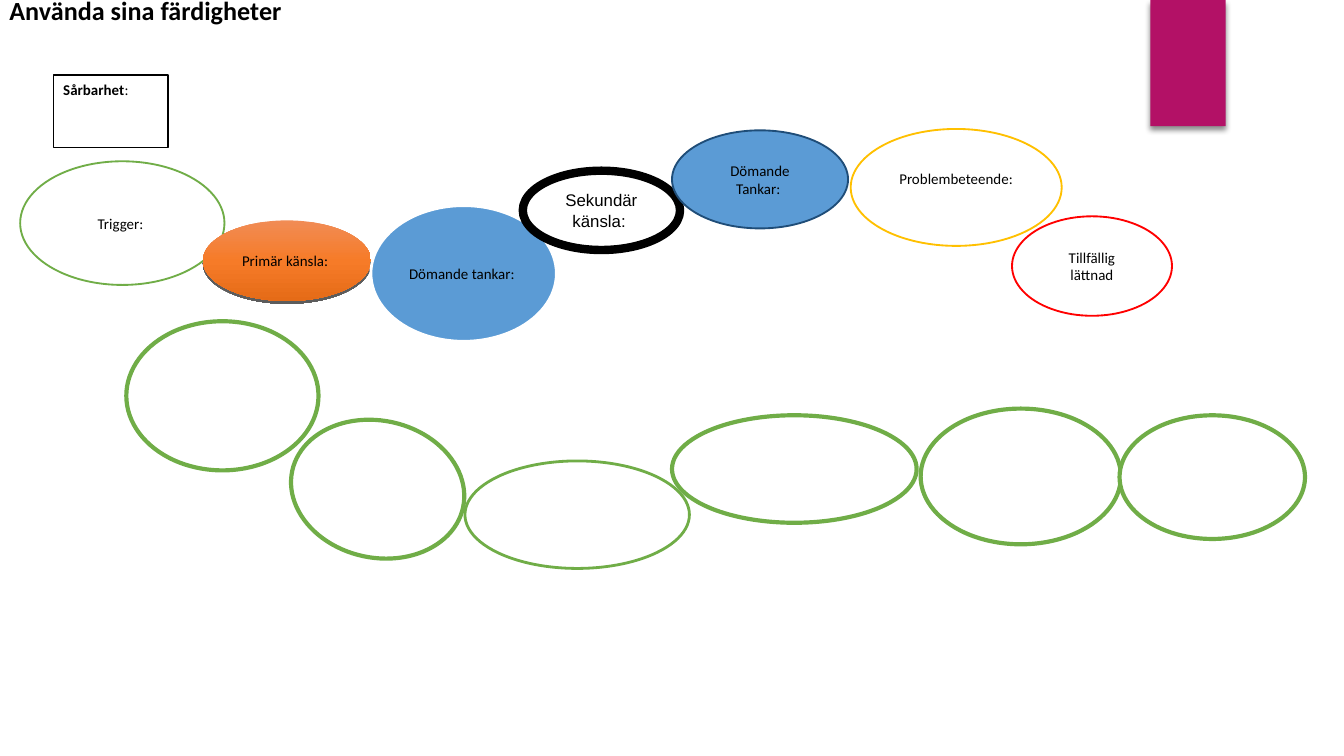
import copy

from lxml import etree
from pptx import Presentation
from pptx import util as u
from pptx.dml.color import RGBColor
from pptx.enum import shapes, text
from pptx.oxml.ns import qn

COLORS = {
    "black": "000000", "white": "FFFFFF", "magenta": "B31166",
    "green": "70AD47", "blue": "5B9BD5", "navy": "1F4D78",
    "yellow": "FFC000", "red": "FF0000",
    "orange_top": "F18C55", "orange_mid": "F67B28", "orange_low": "E56B17",
}
ORANGE = ("orange_top", "orange_mid", "orange_low")
OVAL = shapes.MSO_SHAPE.OVAL
RECTANGLE = shapes.MSO_SHAPE.RECTANGLE


def rgb(name):
    return RGBColor.from_string(COLORS[name])


def paint_gradient(fill, names):
    """Spread the named colours evenly from top to bottom."""
    fill.gradient()
    fill.gradient_angle = 270
    first = fill.gradient_stops[0]._gs
    for _ in range(len(names) - len(fill.gradient_stops)):
        first.addnext(copy.deepcopy(first))
    for i, (stop, name) in enumerate(zip(fill.gradient_stops, names)):
        stop.position = i / (len(names) - 1)
        stop.color.rgb = rgb(name)


def add_shadow(shape, opacity, blur, distance):
    """Drop a black shadow straight down; blur and distance in points."""
    effects = shape._element.spPr.find(qn("a:effectLst"))
    shadow = etree.SubElement(
        effects, qn("a:outerShdw"), blurRad=str(int(u.Pt(blur))),
        dist=str(int(u.Pt(distance))), dir="5400000", rotWithShape="0")
    color = etree.SubElement(shadow, qn("a:srgbClr"), val=COLORS["black"])
    etree.SubElement(color, qn("a:alpha"), val=str(opacity * 1000))


def add_figure(slide, kind, box, fill="white", line=None, width=1, turn=0):
    figure = slide.shapes.add_shape(kind, *map(u.Inches, box))
    figure.shadow.inherit = False
    figure.rotation = turn
    if isinstance(fill, tuple):
        paint_gradient(figure.fill, fill)
    else:
        figure.fill.solid()
        figure.fill.fore_color.rgb = rgb(fill)
    if line:
        figure.line.color.rgb = rgb(line)
        figure.line.width = u.Pt(width)
    else:
        figure.line.fill.background()
    return figure


def write(shape, *parts, size=8, font="Calibri", align=text.PP_ALIGN.CENTER,
          anchor=text.MSO_ANCHOR.MIDDLE, side=0.07, top=0.04, bottom=0.04):
    """Write one paragraph made of (words, bold) parts."""
    frame = shape.text_frame
    frame.word_wrap = True
    frame.vertical_anchor = anchor
    frame.margin_left = frame.margin_right = u.Inches(side)
    frame.margin_top, frame.margin_bottom = u.Inches(top), u.Inches(bottom)
    paragraph = frame.paragraphs[0]
    paragraph.alignment = align
    for words, bold in parts:
        run = paragraph.add_run()
        run.text = words
        run.font.name, run.font.size, run.font.bold = font, u.Pt(size), bold
        run.font.color.rgb = rgb("black")


def add_ribbon(slide, box):
    ribbon = add_figure(slide, RECTANGLE, box, "magenta")
    add_shadow(ribbon, 45, 3, 2)


def add_vulnerability(slide, box):
    note = add_figure(slide, RECTANGLE, box, line="black", width=0.75)
    write(note, ("Sårbarhet", True), (":", False),
          align=text.PP_ALIGN.LEFT, anchor=text.MSO_ANCHOR.TOP)


def add_chain(slide, left, top):
    """Labelled links of the behaviour chain, offset from left and top."""
    links = [
        ("Trigger: ", (0, 0.24, 1.52, 0.92), dict(line="green"), {}),
        ("Primär känsla: ", (1.36, 0.68, 1.25, 0.6), dict(fill=ORANGE), {}),
        ("Dömande tankar: ", (2.61, 0.57, 1.38, 1.01),
         dict(fill="blue", line="white", width=1.5), {}),
        ("Sekundär känsla: ", (3.74, 0.31, 1.17, 0.59),
         dict(line="black", width=4.5), dict(size=9, font="Arial")),
        ("Dömande Tankar: ", (4.85, 0.01, 1.31, 0.73),
         dict(fill="blue", line="navy"), dict(side=0.1)),
        ("Problembeteende:", (6.18, 0, 1.57, 0.87),
         dict(line="yellow"), dict(bottom=0.17)),
        ("Tillfällig lättnad", (7.38, 0.65, 1.19, 0.74),
         dict(line="red"), dict(side=0.1)),
    ]
    for label, (x, y, w, h), look, style in links:
        link = add_figure(slide, OVAL, (left + x, top + y, w, h), **look)
        write(link, (label, False), **style)
        if look.get("fill") == ORANGE:
            add_shadow(link, 63, 0, 1.5)


def add_skills(slide, left, top):
    """Empty green ovals to fill in, offset from left and top."""
    skills = [
        ((0, 0, 1.43, 1.11), 2.25, 0),
        ((1.22, 0.74, 1.3, 1.02), 2.25, 12),
        ((2.52, 1.04, 1.67, 0.8), 1.5, 0),
        ((4.06, 0.7, 1.82, 0.8), 2.25, 0),
        ((5.91, 0.65, 1.49, 1.01), 2.25, 0),
        ((7.39, 0.7, 1.38, 0.92), 2.25, 0),
    ]
    for (x, y, w, h), width, turn in skills:
        add_figure(slide, OVAL, (left + x, top + y, w, h),
                   line="green", width=width, turn=turn)


def add_title(slide, box):
    title = slide.shapes.add_textbox(*map(u.Inches, box))
    write(title, ("Använda sina färdigheter", True), size=14,
          align=text.PP_ALIGN.LEFT, top=0, bottom=0.23)


def main():
    deck = Presentation()
    # Widescreen, 16:9
    deck.slide_width = u.Inches(10)
    deck.slide_height = deck.slide_width * 9 // 16
    slide = deck.slides.add_slide(deck.slide_layouts[6])
    add_ribbon(slide, (8.56, 0, 0.56, 0.94))
    add_vulnerability(slide, (0.4, 0.56, 0.85, 0.54))
    add_chain(slide, 0.15, 0.96)
    add_skills(slide, 0.94, 2.39)
    add_title(slide, (0, 0, 10, 0.38))
    deck.save("out.pptx")


if __name__ == "__main__":
    main()
